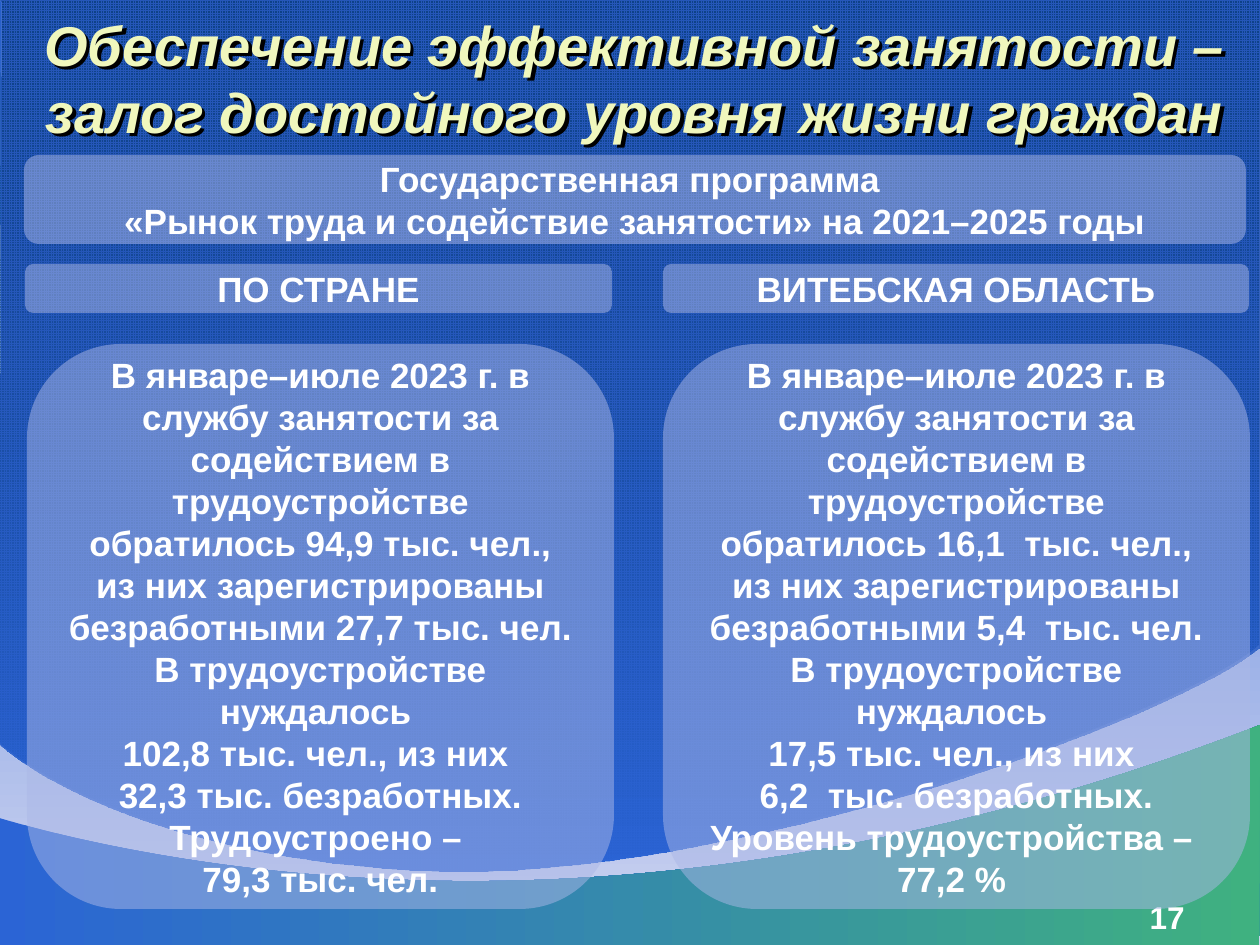
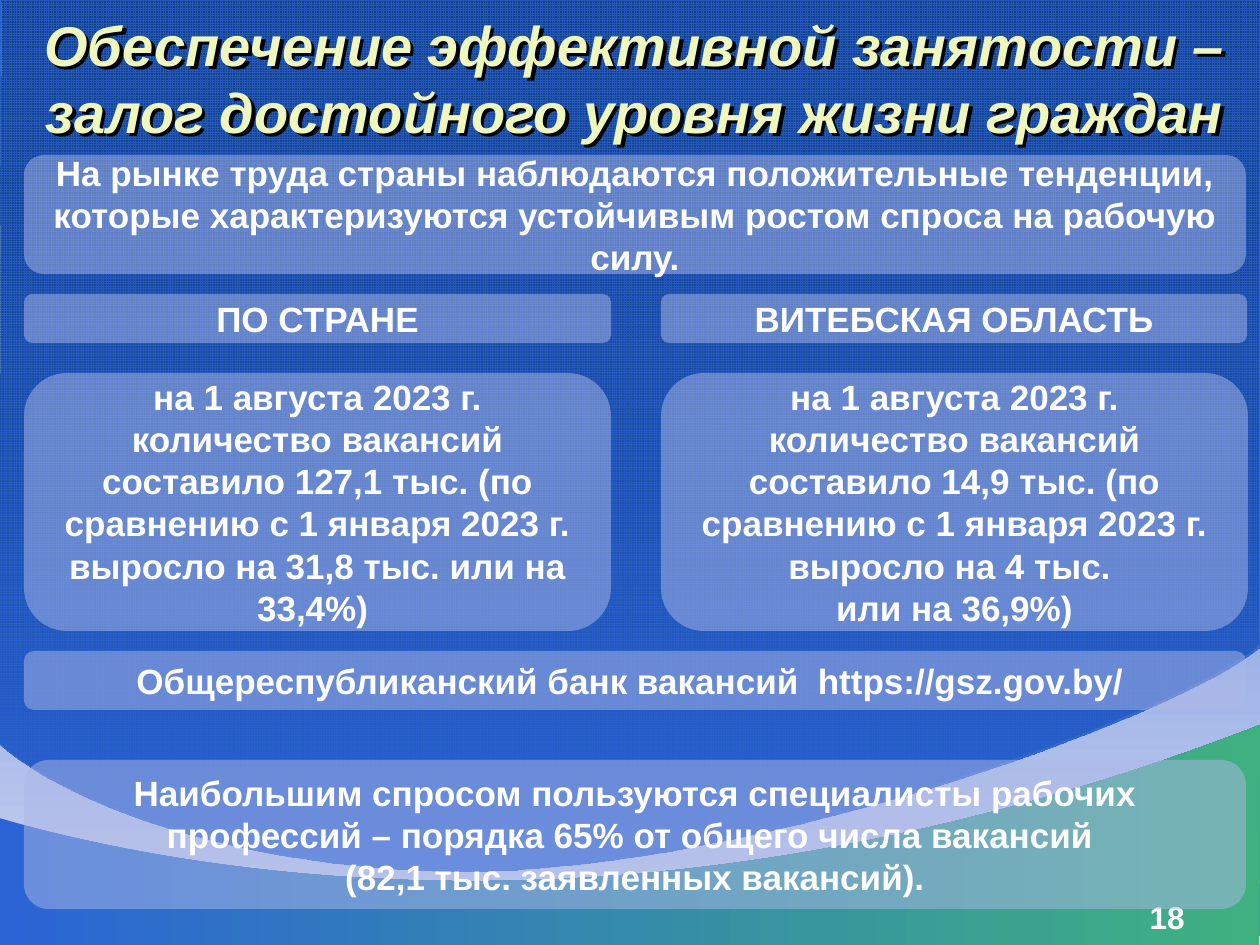
from lxml.etree import SubElement
from pptx import Presentation
from pptx.dml.color import RGBColor
from pptx.enum.dml import MSO_PATTERN
from pptx.enum.shapes import MSO_SHAPE
from pptx.enum.text import MSO_ANCHOR, MSO_AUTO_SIZE, PP_ALIGN
from pptx.oxml.ns import qn
from pptx.util import Emu, Pt

EMU_PER_PX = 914400 / 126
WIDTH, HEIGHT = 1260, 945

BLUE = RGBColor(0x2B, 0x64, 0xD5)
NAVY = RGBColor(0x1F, 0x48, 0x98)
DEEP_BLUE = RGBColor(0x00, 0x3D, 0x7B)
MIST = RGBColor(0xCE, 0xD4, 0xF0)
GREEN = RGBColor(0x3F, 0xB1, 0x80)
PANEL = RGBColor(0xAC, 0xB8, 0xE7)
CREAM = RGBColor(0xF0, 0xF7, 0xBD)
WHITE = RGBColor(0xFF, 0xFF, 0xFF)
BLACK = RGBColor(0x00, 0x00, 0x00)

TITLE_FONT = {"name": "Arial", "size": Pt(32), "bold": True, "italic": True}
PANEL_FONT = {"name": "Arial", "size": Pt(20), "bold": True}
NUMBER_FONT = {"name": "Arial", "size": Pt(18), "bold": True}
CENTRED_FRAME = {
    "word_wrap": True,
    "auto_size": MSO_AUTO_SIZE.NONE,
    "vertical_anchor": MSO_ANCHOR.MIDDLE,
}
NUMBER_FRAME = {**CENTRED_FRAME, "vertical_anchor": MSO_ANCHOR.TOP}

TITLE = "Обеспечение эффективной занятости – залог достойного уровня жизни граждан"
REGIONS = ("ПО СТРАНЕ", "ВИТЕБСКАЯ ОБЛАСТЬ")
HEADING_WIDTHS = (587, 586)
PROGRAMME = (
    "Государственная программа \n"
    "«Рынок труда и содействие занятости» на 2021–2025 годы"
)
EMPLOYMENT = (
    "В январе–июле 2023 г. в службу занятости за содействием в трудоустройстве "
    "обратилось {} тыс. чел., из них зарегистрированы безработными {} тыс. чел. "
    "В трудоустройстве нуждалось \n"
    "{} тыс. чел., из них \v{} тыс. безработных. {} – \n{}"
)
EMPLOYMENT_FIGURES = (
    ("94,9", "27,7", "102,8", "32,3", "Трудоустроено", "79,3 тыс. чел."),
    ("16,1 ", "5,4 ", "17,5", "6,2 ", "Уровень трудоустройства", "77,2 % "),
)
TREND = (
    "На рынке труда страны наблюдаются положительные тенденции, которые "
    "характеризуются устойчивым ростом спроса на рабочую силу."
)
VACANCIES = (
    "на 1 августа 2023 г. количество вакансий составило {} тыс. "
    "(по сравнению с 1 января 2023 г. выросло на {}"
)
VACANCY_FIGURES = (
    ("127,1", "31,8 тыс. или на 33,4%) "),
    ("14,9", "4 тыс. \vили на 36,9%)"),
)
VACANCY_BANK = "Общереспубликанский банк вакансий  https://gsz.gov.by/ "
DEMAND = (
    "Наибольшим спросом пользуются специалисты рабочих профессий – порядка 65% "
    "от общего числа вакансий \v(82,1 тыс. заявленных вакансий)."
)

SKY_START = (-1, 742)
SKY_CURVES = [(14, 757), (139, 856), (431, 869), (722, 881), (1177, 716), (1259, 645)]
SKY_CORNERS = [(1259, -2), (0, -1), (1, 1)]
HILL_START = (-1, 818)
HILL_CURVES = [(14, 822), (163, 869), (384, 879), (606, 890), (910, 861), (1260, 725)]
HILL_CORNERS = [(1259, HEIGHT), (-4, HEIGHT)]


def px(value):
    """Turn pixels into EMU."""
    return Emu(round(value * EMU_PER_PX))


def apply_format(target, formats):
    """Set every attribute named in the format dict."""
    for attribute, value in formats.items():
        setattr(target, attribute, value)


def write_text(frame, text, frame_format, font_format, color, align=PP_ALIGN.CENTER):
    """Fill a text frame and format all of its runs."""
    frame.text = text
    apply_format(frame, frame_format)
    for paragraph in frame.paragraphs:
        paragraph.alignment = align
        for run in paragraph.runs:
            apply_format(run.font, font_format)
            run.font.color.rgb = color


def fade_first_color(shape, percent):
    """Set the opacity of the first colour in the shape's fill."""
    color = shape.element.spPr.find(".//" + qn("a:srgbClr"))
    SubElement(color, qn("a:alpha"), val=str(percent * 1000))


def paint_gradient(fill, colors, angle):
    """Apply a two-colour linear gradient."""
    fill.gradient()
    fill.gradient_angle = angle
    for stop, color in zip(fill.gradient_stops, colors):
        stop.color.rgb = color


def bend_segments(outline, curve_points):
    """Turn the leading line segments into cubic curves, three points each."""
    segments = list(outline.element.spPr.iter(qn("a:lnTo")))[:curve_points]
    for first in range(0, curve_points, 3):
        curve = SubElement(segments[first].getparent(), qn("a:cubicBezTo"))
        segments[first].addprevious(curve)
        for segment in segments[first:first + 3]:
            curve.append(segment[0])
            segment.getparent().remove(segment)


def add_landscape(slide, start, curves, corners, shift=(0, 0)):
    """Draw a closed, lineless outline with a curved edge."""
    dx, dy = shift
    first, *rest = [(px(x + dx), px(y + dy)) for x, y in [start, *curves, *corners]]
    builder = slide.shapes.build_freeform(*first)
    builder.add_line_segments(rest, close=True)
    outline = builder.convert_to_shape()
    bend_segments(outline, len(curves))
    outline.shadow.inherit = False
    outline.line.fill.background()
    return outline


def decorate_master(master, slide):
    """Give the master its gradient, grid sky and green hill."""
    paint_gradient(master.background.fill, (BLUE, MIST), 270)
    grid = add_landscape(slide, SKY_START, SKY_CURVES, SKY_CORNERS)
    grid.fill.patterned()
    grid.fill.pattern = MSO_PATTERN.SMALL_GRID
    grid.fill.fore_color.rgb = BLUE
    grid.fill.back_color.rgb = DEEP_BLUE

    haze = add_landscape(slide, SKY_START, SKY_CURVES, SKY_CORNERS, shift=(1, 2))
    paint_gradient(haze.fill, (NAVY, BLUE), 270)
    fade_first_color(haze, 46)

    hill = add_landscape(slide, HILL_START, HILL_CURVES, HILL_CORNERS)
    paint_gradient(hill.fill, (BLUE, GREEN), 0)

    for order, layer in enumerate((grid, haze, hill)):
        layer.element.nvSpPr.cNvPr.id = 100 + order
        master.shapes.element.insert(2 + order, layer.element)


def add_title(slide):
    """Place the shared title with its black shadow."""
    title = slide.shapes.title
    apply_format(title, {"left": px(5), "top": px(0), "width": px(WIDTH), "height": px(155)})
    write_text(title.text_frame, TITLE, CENTRED_FRAME, TITLE_FONT, CREAM)
    effects = SubElement(title.element.spPr, qn("a:effectLst"))
    shadow = SubElement(effects, qn("a:outerShdw"), dist="35921", dir="2700000", algn="ctr")
    SubElement(shadow, qn("a:srgbClr"), val=str(BLACK))


def add_page_number(slide, number):
    """Write the page number at the lower right."""
    box = slide.shapes.add_textbox(px(903), px(892), px(294), px(34))
    write_text(box.text_frame, str(number), NUMBER_FRAME, NUMBER_FONT, WHITE, PP_ALIGN.RIGHT)


def add_panel(slide, text, left, top, width, height):
    """Add a translucent rounded panel with centred text."""
    panel = slide.shapes.add_shape(
        MSO_SHAPE.ROUNDED_RECTANGLE, px(left), px(top), px(width), px(height)
    )
    panel.shadow.inherit = False
    panel.fill.solid()
    panel.fill.fore_color.rgb = PANEL
    fade_first_color(panel, 50)
    panel.line.fill.background()
    write_text(panel.text_frame, text, CENTRED_FRAME, PANEL_FONT, WHITE)


def add_wide_panel(slide, text, top, height):
    """Add a panel across the whole slide."""
    add_panel(slide, text, 24, top, 1222, height)


def add_region_headings(slide, lefts, top):
    """Add the heading of each region."""
    for region, left, width in zip(REGIONS, lefts, HEADING_WIDTHS):
        add_panel(slide, region, left, top, width, 49)


def add_region_panels(slide, template, figures, lefts, top, height):
    """Add the panel of each region, filled with its figures."""
    for region_figures, left in zip(figures, lefts):
        add_panel(slide, template.format(*region_figures), left, top, 587, height)


def add_page(presentation, number):
    """Add a slide with the shared title and page number."""
    slide = presentation.slides.add_slide(presentation.slide_layouts[5])
    add_page_number(slide, number)
    add_title(slide)
    return slide


def main():
    """Build the two employment slides."""
    presentation = Presentation()
    apply_format(presentation, {"slide_width": px(WIDTH), "slide_height": px(HEIGHT)})

    employment = add_page(presentation, 17)
    decorate_master(presentation.slide_master, employment)
    add_wide_panel(employment, PROGRAMME, 155, 89)
    add_region_headings(employment, (25, 663), 264)
    add_region_panels(employment, EMPLOYMENT, EMPLOYMENT_FIGURES, (27, 663), 344, 565)

    vacancies = add_page(presentation, 18)
    add_wide_panel(vacancies, TREND, 155, 119)
    add_region_headings(vacancies, (24, 661), 294)
    add_region_panels(vacancies, VACANCIES, VACANCY_FIGURES, (24, 661), 373, 258)
    add_wide_panel(vacancies, VACANCY_BANK, 651, 59)
    add_wide_panel(vacancies, DEMAND, 760, 149)

    presentation.save("out.pptx")


if __name__ == "__main__":
    main()
